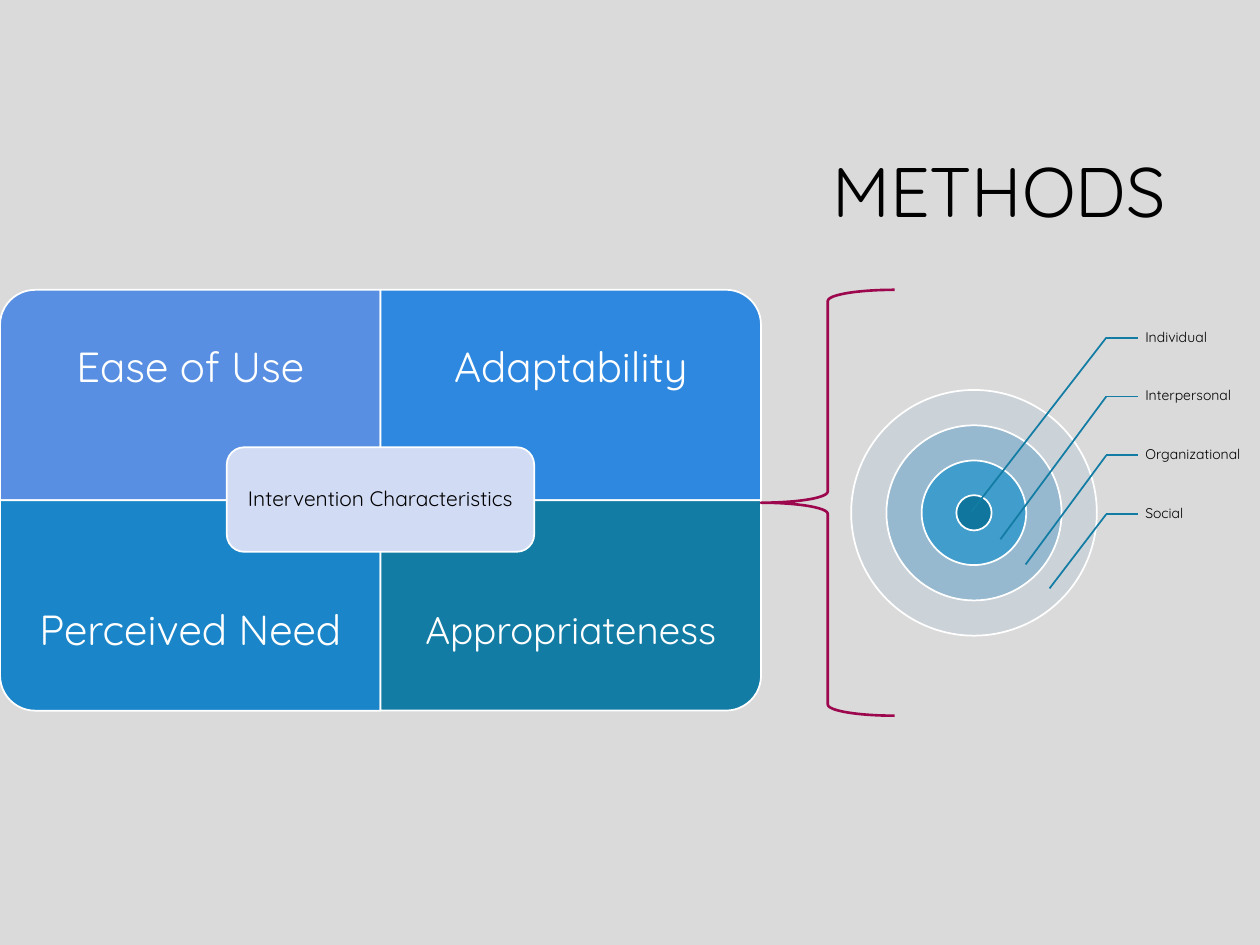
from lxml import etree
from pptx import Presentation
from pptx.dml.color import RGBColor
from pptx.enum.shapes import MSO_CONNECTOR, MSO_SHAPE
from pptx.enum.text import MSO_ANCHOR, PP_ALIGN
from pptx.oxml.ns import qn
from pptx.util import Inches, Pt

COLORS = {
    "background": "DADADA", "black": "000000", "white": "FFFFFF",
    "social": "BDCCD8", "organizational": "7CADCC",
    "interpersonal": "3098CB", "individual": "11769D",
    "ease": "588FE2", "adaptability": "2F88DF", "need": "1A85C8",
    "teal": "127CA4", "center": "D1DBF4", "brace": "9D074E",
}


def add_outlined_shape(kind, left, top, width, height, fill, opacity=100):
    shape = slide.shapes.add_shape(
        kind, Inches(left), Inches(top), Inches(width), Inches(height))
    shape.shadow.inherit = False
    shape.fill.solid()
    shape.fill.fore_color.rgb = RGBColor.from_string(COLORS[fill])
    if opacity < 100:
        color = shape.fill._xPr.find(qn("a:solidFill"))[0]
        etree.SubElement(color, qn("a:alpha")).set("val", str(opacity * 1000))
    shape.line.color.rgb = RGBColor.from_string(COLORS["white"])
    shape.line.width = Pt(1)
    return shape


def write_text(shape, text, size, color, alignment, margins):
    """Margins are left, top, right and bottom, in inches."""
    frame = shape.text_frame
    frame.word_wrap = True
    frame.vertical_anchor = MSO_ANCHOR.MIDDLE
    (frame.margin_left, frame.margin_top,
     frame.margin_right, frame.margin_bottom) = map(Inches, margins)
    paragraph = frame.paragraphs[0]
    paragraph.text = text
    paragraph.alignment = alignment
    paragraph.line_spacing = 0.9
    paragraph.font.size = Pt(size)
    paragraph.font.name = "Quicksand"
    paragraph.font.color.rgb = RGBColor.from_string(COLORS[color])


presentation = Presentation()
presentation.slide_width = Inches(10)
presentation.slide_height = Inches(7.5)
slide = presentation.slides.add_slide(presentation.slide_layouts[5])
slide.background.fill.solid()
slide.background.fill.fore_color.rgb = RGBColor.from_string(COLORS["background"])

title = slide.shapes.title
title.left, title.top = Inches(2.38), Inches(0.84)
title.width, title.height = Inches(6.97), Inches(1.41)
write_text(title, "METHODS", 40, "black", PP_ALIGN.RIGHT, (0.1, 0.05, 0.1, 0.05))

# Concentric rings, outermost first
ring_x, ring_y = 7.73, 4.07
for diameter, fill, opacity in [(1.95, "social", 50), (1.39, "organizational", 67),
                                (0.83, "interpersonal", 83), (0.28, "individual", 100)]:
    add_outlined_shape(MSO_SHAPE.OVAL, ring_x - diameter / 2, ring_y - diameter / 2,
                       diameter, diameter, fill, opacity)

# Ring labels, each with a leader that bends at the same x
bend_x, label_x, label_height = 8.78, 9.03, 0.47
leaders = [("Individual", 7.71, 4.06), ("Interpersonal", 7.94, 4.28),
           ("Organizational", 8.14, 4.48), ("Social", 8.33, 4.67)]
for index, (label, ring_point_x, ring_point_y) in enumerate(leaders):
    y = 2.68 + index * 0.467
    box = slide.shapes.add_textbox(Inches(label_x), Inches(y - label_height / 2),
                                   Inches(0.97), Inches(label_height))
    write_text(box, label, 8, "black", PP_ALIGN.LEFT, (0.06, 0.01, 0.01, 0.01))
    for end_x, end_y in [(label_x, y), (ring_point_x, ring_point_y)]:
        leader = slide.shapes.add_connector(
            MSO_CONNECTOR.STRAIGHT, Inches(bend_x), Inches(y), Inches(end_x), Inches(end_y))
        leader.line.color.rgb = RGBColor.from_string(COLORS["teal"])
        leader.line.width = Pt(1)
        etree.SubElement(leader._element.spPr, qn("a:effectLst"))

# Four quadrants, each turned so that its round corner faces outwards
matrix_top, quadrant_width, quadrant_height, text_height = 2.3, 3.02, 1.67, 1.25
quadrants = [("Ease of Use", 24, "ease", 270, 0.19),
             ("Adaptability", 24, "adaptability", 0, 0.19),
             ("Perceived Need", 24, "need", 180, 0.19),
             ("Appropriateness", 22, "teal", 90, 0.17)]
for index, (label, size, fill, rotation, margin) in enumerate(quadrants):
    row, column = divmod(index, 2)
    left = column * quadrant_width
    top = matrix_top + row * quadrant_height
    width, height = quadrant_width, quadrant_height
    if rotation in (90, 270):
        width, height = height, width
    quadrant = add_outlined_shape(
        MSO_SHAPE.ROUND_1_RECTANGLE, left + (quadrant_width - width) / 2,
        top + (quadrant_height - height) / 2, width, height, fill)
    quadrant.rotation = rotation
    box = slide.shapes.add_textbox(
        Inches(left), Inches(top + row * (quadrant_height - text_height)),
        Inches(quadrant_width), Inches(text_height))
    write_text(box, label, size, "white", PP_ALIGN.CENTER, [margin] * 4)

center = add_outlined_shape(MSO_SHAPE.ROUNDED_RECTANGLE, 1.8, 3.55, 2.44, 0.83, "center")
write_text(center, "Intervention Characteristics", 12, "black", PP_ALIGN.CENTER, [0.05] * 4)

brace = slide.shapes.add_shape(MSO_SHAPE.LEFT_BRACE, Inches(6.04), Inches(2.3),
                               Inches(1.06), Inches(3.38))
brace.shadow.inherit = False
brace.fill.background()
brace.line.color.rgb = RGBColor.from_string(COLORS["brace"])
brace.line.width = Pt(1.5)

presentation.save("out.pptx")
